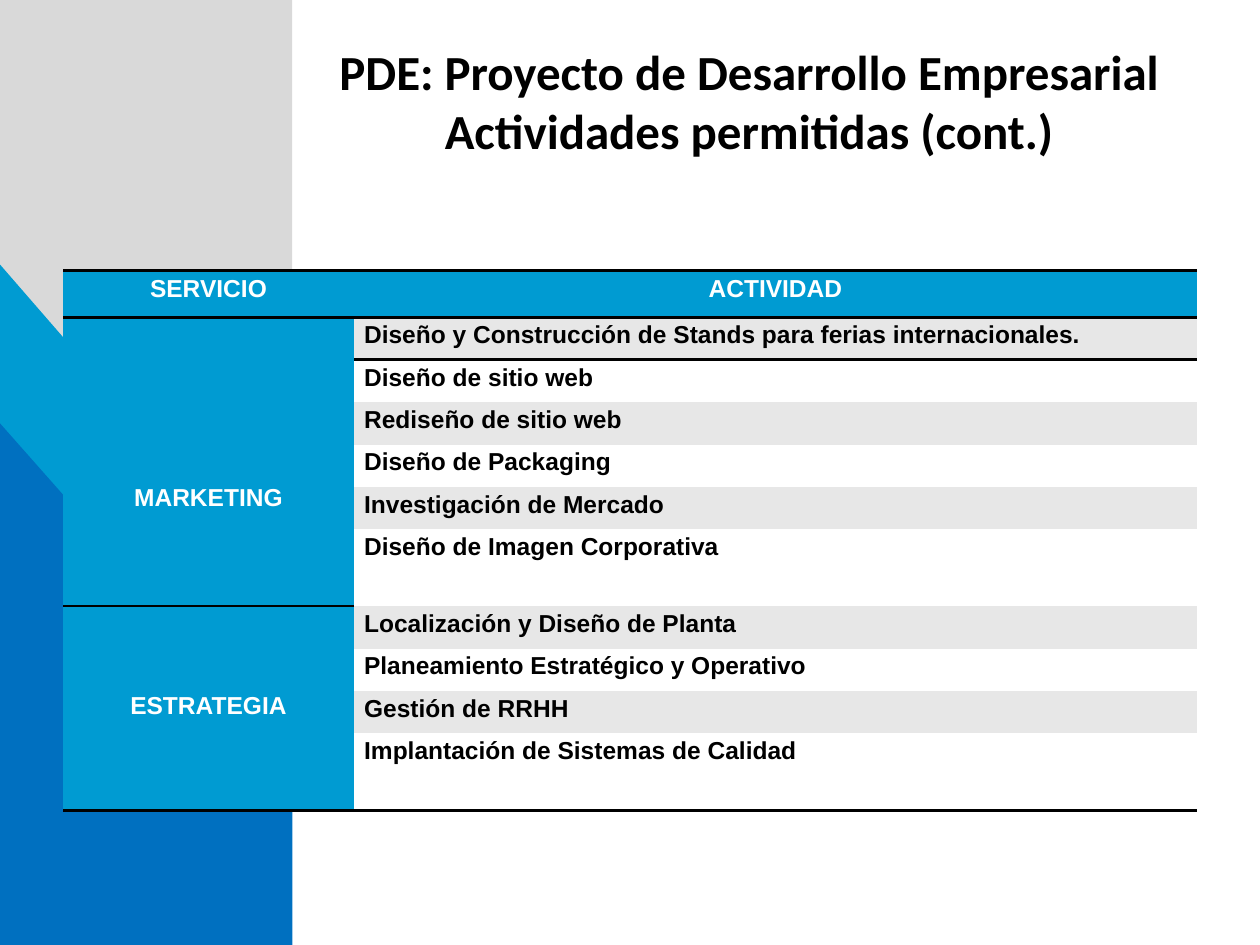
"""Build the slide of permitted PDE activities, grouped by service."""
from lxml.etree import SubElement
from pptx import Presentation
from pptx.dml.color import RGBColor as RGB
from pptx.enum.shapes import MSO_SHAPE as SHAPE
from pptx.enum.text import MSO_ANCHOR as ANCHOR, PP_ALIGN as ALIGN
from pptx.oxml.ns import qn
from pptx.util import Inches, Pt

THEME = {
    "gray": RGB.from_string("D9D9D9"),
    "cyan": RGB.from_string("009BD2"),
    "blue": RGB.from_string("0070C0"),
    "white": RGB.from_string("FFFFFF"),
    "black": RGB.from_string("000000"),
    "band": RGB.from_string("E7E7E7"),
    "title_size": Pt(28),
    "table_size": Pt(14),
}
NO_TABLE_STYLE = "{2D5ABB26-0587-4C30-8999-92F81FD0307C}"
SERVICES = [
    ("MARKETING", 1.29, [
        "Diseño y Construcción de Stands para ferias internacionales.",
        "Diseño de sitio web",
        "Rediseño de sitio web",
        "Diseño de Packaging",
        "Investigación de Mercado",
        "Diseño de Imagen Corporativa",
    ]),
    ("ESTRATEGIA", 0.65, [
        "Localización y Diseño de Planta",
        "Planeamiento Estratégico y Operativo",
        "Gestión de RRHH",
        "Implantación de Sistemas de Calidad",
    ]),
]


def set_font(font, **values):
    for name, value in values.items():
        setattr(font, name, value)


def fill_cell(cell, text, fill, color, align, top=0, borders=()):
    margins = {"margin_left": 0.08, "margin_right": 0.08, "margin_top": top, "margin_bottom": 0}
    for name, value in margins.items():
        setattr(cell, name, Inches(value))
    cell.vertical_anchor = ANCHOR.TOP
    for side, width in borders:
        line = SubElement(cell._tc.get_or_add_tcPr(), qn(f"a:ln{side}"), w=str(Pt(width)))
        SubElement(SubElement(line, qn("a:solidFill")), qn("a:srgbClr"), val=str(THEME["black"]))
    cell.fill.solid()
    cell.fill.fore_color.rgb = THEME[fill]
    paragraph = cell.text_frame.paragraphs[0]
    paragraph.alignment = align
    paragraph.line_spacing = 1.15
    paragraph.space_before = Pt(5)
    run = paragraph.add_run()
    run.text = text
    set_font(run.font, name="Arial", size=THEME["table_size"], bold=True)
    run.font.color.rgb = THEME[color]


deck = Presentation()
deck.slide_width, deck.slide_height = Inches(10), Inches(7.5)
slide = deck.slides.add_slide(deck.slide_layouts[6])

for kind, left, top, width, color in [
    (SHAPE.RECTANGLE, 0, 0, 2.32, "gray"),
    (SHAPE.RIGHT_TRIANGLE, 0, 2.1, 4.69, "cyan"),
    (SHAPE.RIGHT_TRIANGLE, 0, 3.36, 3.66, "blue"),
    (SHAPE.RECTANGLE, 2.32, 0, 7.68, "white"),
]:
    panel = slide.shapes.add_shape(
        kind, Inches(left), Inches(top), Inches(width), Inches(7.5 - top))
    panel.shadow.inherit = False
    panel.fill.solid()
    panel.fill.fore_color.rgb = THEME[color]
    panel.line.fill.background()

title = slide.shapes.add_textbox(
    Inches(2.4), Inches(0.52), Inches(7.09), Inches(0.79)).text_frame
title.word_wrap = True
title.vertical_anchor = ANCHOR.BOTTOM
heading = title.paragraphs[0]
heading.alignment = ALIGN.CENTER
for number, text in enumerate(
        ["PDE: Proyecto de Desarrollo Empresarial", "Actividades permitidas (cont.)"]):
    if number:
        heading.add_line_break()
    run = heading.add_run()
    run.text = text
    set_font(run.font, name="Calibri", size=THEME["title_size"], bold=True)
    run.font.color.rgb = THEME["black"]

last_row = sum(len(activities) for _, _, activities in SERVICES)
frame = slide.shapes.add_table(
    last_row + 1, 2, Inches(0.5), Inches(2.15), Inches(9), Inches(4.28))
table = frame.table
table._tbl.tblPr.find(qn("a:tableStyleId")).text = NO_TABLE_STYLE
table.columns[0].width, table.columns[1].width = Inches(2.31), Inches(6.69)
header_height, closing_height = 0.37, 0.61
closing_rows = len(SERVICES)
plain_height = (4.28 - header_height - closing_rows * closing_height) / (last_row - closing_rows)

table.rows[0].height = Inches(header_height)
for column, label in enumerate(["SERVICIO", "ACTIVIDAD"]):
    fill_cell(table.cell(0, column), label, "cyan", "white", ALIGN.CENTER,
              borders=[("T", 2), ("B", 2)])

row = 1
for service, label_top, activities in SERVICES:
    first, final = row, row + len(activities) - 1
    service_cell = table.cell(first, 0)
    service_cell.merge(table.cell(final, 0))
    fill_cell(service_cell, service, "cyan", "white", ALIGN.CENTER, label_top,
              [("T", 2 if first == 1 else 1), ("B", 2 if final == last_row else 1)])
    for activity in activities:
        borders = [("T", 2)] if row == 1 else [("B", 2)] if row == last_row else []
        fill_cell(table.cell(row, 1), activity, "band" if row % 2 else "white",
                  "black", ALIGN.JUSTIFY, borders=borders)
        table.rows[row].height = Inches(closing_height if row == final else plain_height)
        row += 1

deck.save("out.pptx")
